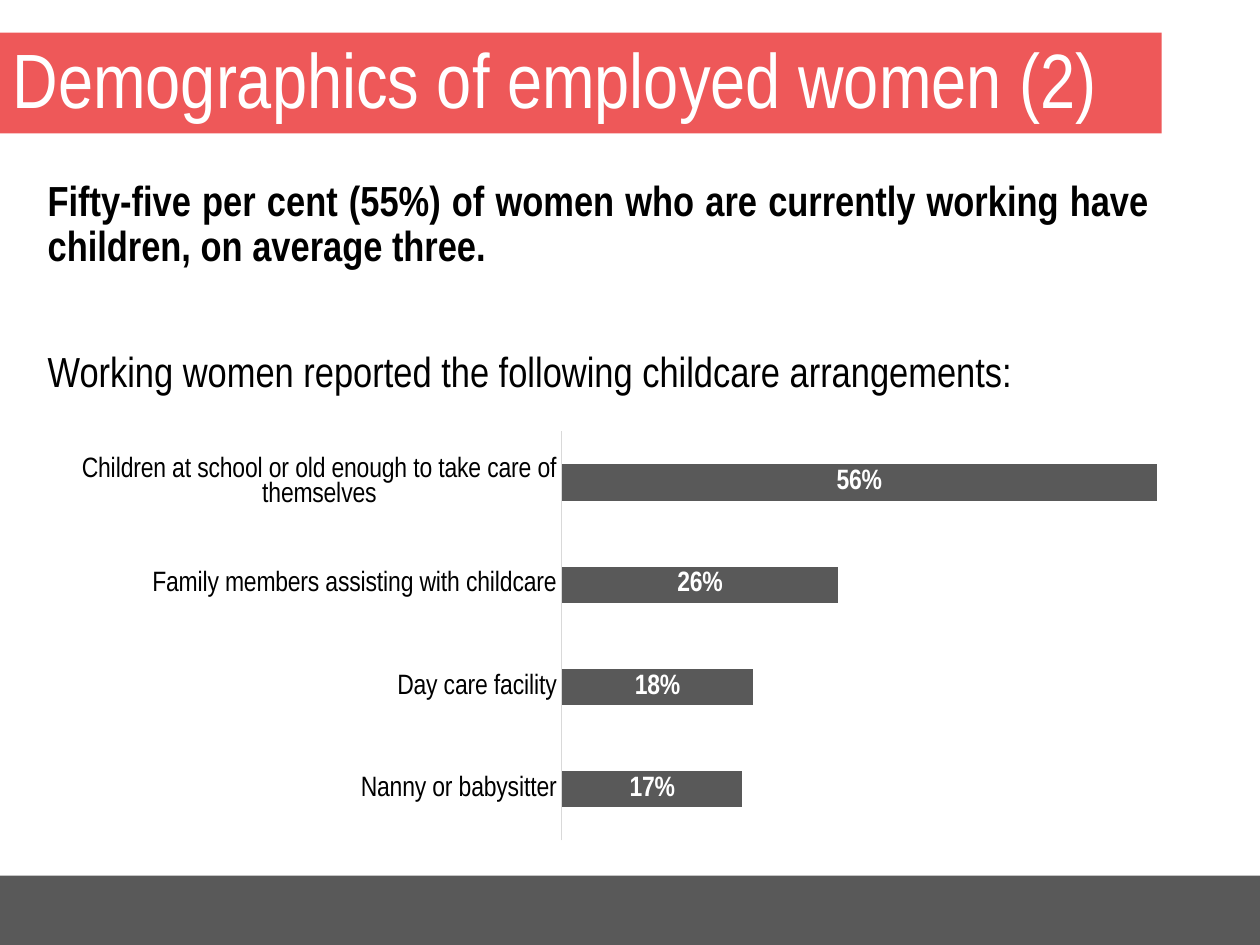
"""Build the slide on childcare arrangements of employed women."""
from dataclasses import dataclass
from typing import NamedTuple

import pptx
import pptx.chart.data
import pptx.dml.color
import pptx.enum.chart
import pptx.enum.shapes
import pptx.enum.text
import pptx.oxml
import pptx.oxml.ns
import pptx.util
from pptx.util import Inches

RGB = pptx.dml.color.RGBColor
Pt = pptx.util.Pt
PP_ALIGN = pptx.enum.text.PP_ALIGN
XL = pptx.enum.chart


@dataclass(frozen=True)
class Theme:
    coral: RGB = RGB(0xEE, 0x58, 0x59)
    charcoal: RGB = RGB(0x59, 0x59, 0x59)
    axis_line: RGB = RGB(0xD9, 0xD9, 0xD9)
    black: RGB = RGB(0, 0, 0)
    white: RGB = RGB(0xFF, 0xFF, 0xFF)
    font: str = "Arial Narrow"
    title_size: int = 44
    body_size: int = 24
    label_size: int = 16


class Box(NamedTuple):
    left: float
    top: float
    width: float
    height: float

    def lengths(self):
        return tuple(Inches(value) for value in self)


class Statement(NamedTuple):
    text: str
    bold: bool
    space_before: float


class Arrangement(NamedTuple):
    name: str
    share: float


THEME = Theme()
STATEMENTS = (
    Statement("Fifty-five per cent (55%) of women who are currently working "
              "have children, on average three. ", True, 0),
    Statement("Working women reported the following childcare arrangements:",
              False, 46),
)
ARRANGEMENTS = (
    Arrangement("Children at school or old enough to take care of themselves", 0.56),
    Arrangement("Family members assisting with childcare", 0.26),
    Arrangement("Day care facility", 0.18),
    Arrangement("Nanny or babysitter", 0.17),
)


def style_font(font, size: int, color: RGB, bold: bool = False) -> None:
    """Apply the theme typeface with a size, colour and weight."""
    font.name = THEME.font
    font.size = Pt(size)
    font.color.rgb = color
    font.bold = bold


def add_footer_band(slide, box: Box) -> None:
    """Draw the plain band along the bottom edge."""
    band = slide.shapes.add_shape(
        pptx.enum.shapes.MSO_SHAPE.RECTANGLE, *box.lengths())
    band.shadow.inherit = False
    band.fill.solid()
    band.fill.fore_color.rgb = THEME.charcoal
    band.line.fill.background()


def set_title(slide, box: Box, text: str) -> None:
    """Place the title on its coloured banner."""
    title = slide.shapes.title
    title.left, title.top, title.width, title.height = box.lengths()
    title.fill.solid()
    title.fill.fore_color.rgb = THEME.coral
    frame = title.text_frame
    frame.text = text
    frame.auto_size = pptx.enum.text.MSO_AUTO_SIZE.NONE
    frame.vertical_anchor = pptx.enum.text.MSO_ANCHOR.MIDDLE
    heading = frame.paragraphs[0]
    heading.alignment = PP_ALIGN.LEFT
    heading.line_spacing = 0.9
    style_font(heading.font, THEME.title_size, THEME.white)


def add_statements(slide, box: Box, statements: tuple[Statement, ...]) -> None:
    """Write the justified statements above the chart."""
    frame = slide.shapes.add_textbox(*box.lengths()).text_frame
    frame.word_wrap = True
    for index, statement in enumerate(statements):
        paragraph = frame.add_paragraph() if index else frame.paragraphs[0]
        paragraph.text = statement.text
        paragraph.alignment = PP_ALIGN.JUSTIFY
        paragraph.line_spacing = 0.9
        paragraph.space_before = Pt(statement.space_before)
        style_font(paragraph.font, THEME.body_size, THEME.black, statement.bold)


def set_plot_area(chart, area: Box) -> None:
    """Fix the inner plot area as fractions of the chart."""
    modes = "".join(f'<c:{tag}Mode val="edge"/>' for tag in "xy")
    sizes = "".join(f'<c:{tag} val="{value}"/>' for tag, value in zip("xywh", area))
    layout = pptx.oxml.parse_xml(
        f'<c:layout {pptx.oxml.ns.nsdecls("c")}><c:manualLayout>'
        f'<c:layoutTarget val="inner"/>{modes}{sizes}'
        '</c:manualLayout></c:layout>')
    plot_area = chart.plots[0]._element.getparent()
    for default in plot_area.findall(pptx.oxml.ns.qn("c:layout")):
        plot_area.remove(default)
    plot_area.insert(0, layout)


def add_arrangement_chart(slide, box: Box, plot_area: Box,
                          arrangements: tuple[Arrangement, ...]) -> None:
    """Chart the share of women using each arrangement."""
    shares = pptx.chart.data.CategoryChartData(number_format="0%")
    shares.categories = [item.name for item in arrangements]
    shares.add_series("Series 1", [item.share for item in arrangements])
    chart = slide.shapes.add_chart(
        XL.XL_CHART_TYPE.BAR_CLUSTERED, *box.lengths(), shares).chart
    chart.has_legend = False
    chart.has_title = False
    style_font(chart.font, THEME.label_size, THEME.black)

    names = chart.category_axis
    names.reverse_order = True
    names.major_tick_mark = XL.XL_TICK_MARK.NONE
    names.format.line.color.rgb = THEME.axis_line
    names.format.line.width = Pt(0.75)
    style_font(names.tick_labels.font, THEME.label_size, THEME.black)

    scale = chart.value_axis
    scale.minimum_scale, scale.maximum_scale = 0, 0.6
    scale.has_major_gridlines = False
    scale.visible = False

    plot = chart.plots[0]
    plot.gap_width = 182
    plot.vary_by_categories = False
    bars = plot.series[0]
    bars.format.fill.solid()
    bars.format.fill.fore_color.rgb = THEME.charcoal
    labels = bars.data_labels
    labels.show_value = True
    labels.number_format = "0%"
    labels.number_format_is_linked = False
    labels.position = XL.XL_LABEL_POSITION.CENTER
    style_font(labels.font, THEME.label_size, THEME.white, bold=True)
    set_plot_area(chart, plot_area)


def main() -> None:
    """Assemble and save the slide."""
    deck = pptx.Presentation()
    deck.slide_width, deck.slide_height = Inches(10), Inches(7.5)
    slide = deck.slides.add_slide(deck.slide_layouts.get_by_name("Title Only"))
    add_footer_band(slide, Box(0, 6.95, 10, 0.55))
    set_title(slide, Box(0, 0.26, 9.22, 0.8), "Demographics of employed women (2)")
    add_statements(slide, Box(0.28, 1.38, 8.94, 1.9), STATEMENTS)
    add_arrangement_chart(slide, Box(0.43, 3.28, 9.37, 3.57),
                          Box(0.43, 0.04, 0.54, 0.91), ARRANGEMENTS)
    deck.save("out.pptx")


if __name__ == "__main__":
    main()
